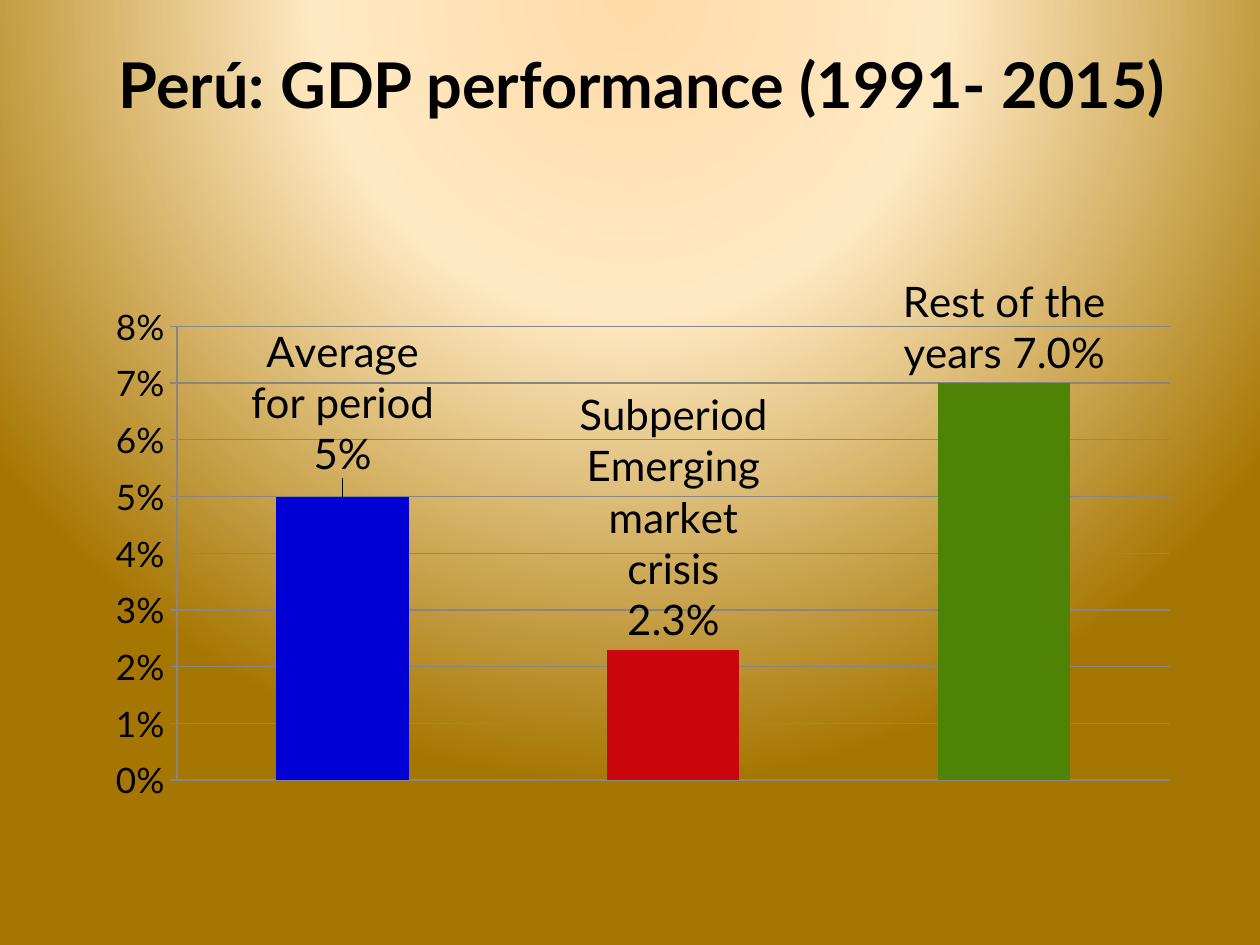
"""Build a slide with a column chart of GDP growth in Peru, 1991 to 2015."""
from dataclasses import dataclass

from lxml import etree
from pptx import Presentation
from pptx import util as u
from pptx.chart.data import CategoryChartData
from pptx.dml.color import RGBColor
from pptx.enum import chart as charts, text
from pptx.oxml import parse_xml
from pptx.oxml.ns import nsdecls, qn


@dataclass(frozen=True)
class Theme:
    font: str = "Lato"
    ink: str = "000000"
    grid: str = "868686"
    backdrop: tuple = ((0, "FFDBA9"), (40, "FFE9C2"), (100, "A67602"))
    title_size: int = 36
    label_size: int = 24
    axis_size: int = 20


theme = Theme()


def style_font(font, size, bold=False):
    font.name = theme.font
    font.size = u.Pt(size)
    font.bold = bold
    font.color.rgb = RGBColor.from_string(theme.ink)


def manual_layout(**values):
    layout = etree.Element(qn("c:layout"))
    manual = etree.SubElement(layout, qn("c:manualLayout"))
    for name, value in values.items():
        etree.SubElement(manual, qn(f"c:{name}")).set("val", str(value))
    return layout


deck = Presentation()
deck.slide_width, deck.slide_height = u.Cm(25.4), u.Cm(19.05)
page = deck.slides.add_slide(deck.slide_layouts[6])

page.background.fill.gradient()
backdrop = page.element.xpath(".//p:bgPr/a:gradFill")[0]
stops = "".join(
    f'<a:gs pos="{place * 1000}"><a:srgbClr val="{color}"/></a:gs>'
    for place, color in theme.backdrop
)
backdrop.getparent().replace(backdrop, parse_xml(
    f'<a:gradFill {nsdecls("a")} rotWithShape="1"><a:gsLst>{stops}</a:gsLst>'
    '<a:path path="circle"><a:fillToRect l="50000" t="-80000" r="50000" b="180000"/>'
    "</a:path></a:gradFill>"
))

box = page.shapes.add_textbox(u.Cm(1.83), u.Cm(-0.89), u.Cm(22.23), u.Cm(3.96))
frame = box.text_frame
frame.word_wrap = True
frame.vertical_anchor = text.MSO_ANCHOR.BOTTOM
frame.margin_bottom = u.Cm(0.63)
para = frame.paragraphs[0]
para.alignment = text.PP_ALIGN.CENTER
span = para.add_run()
span.text = "Perú: GDP performance (1991- 2015)"
style_font(span.font, theme.title_size, bold=True)

bars = (
    (0.05, "0000D5", ("Average for period", "5%")),
    (0.023, "CA060D", ("Subperiod Emerging market crisis", "2.3%")),
    (0.07, "4E8305", ("Rest of the years 7.0%",)),
)
data = CategoryChartData(number_format="0.0%")
data.categories = ["1", "2", "3"]
data.add_series("Series 1", [value for value, color, lines in bars])
chart = page.shapes.add_chart(
    charts.XL_CHART_TYPE.COLUMN_CLUSTERED,
    u.Cm(1.57), u.Cm(4.52), u.Cm(22.23), u.Cm(12.88), data,
).chart
chart.has_legend = False
chart.has_title = False
style_font(chart.font, theme.axis_size)
chart.category_axis.visible = False

axis = chart.value_axis
axis.minimum_scale, axis.maximum_scale, axis.major_unit = 0, 0.08, 0.01
axis.major_tick_mark = charts.XL_TICK_MARK.OUTSIDE
axis.has_major_gridlines = True
axis.tick_labels.number_format = "0%"
axis.tick_labels.number_format_is_linked = False
style_font(axis.tick_labels.font, theme.axis_size)
for line in (axis.format.line, axis.major_gridlines.format.line):
    line.color.rgb = RGBColor.from_string(theme.grid)
    line.width = u.Pt(0.75)

plot = chart.plots[0]
plot.gap_width = 150
plot.vary_by_categories = False
series = plot.series[0]
for index, (value, color, lines) in enumerate(bars):
    point = series.points[index]
    point.format.fill.solid()
    point.format.fill.fore_color.rgb = RGBColor.from_string(color)
    label = point.data_label
    for number, line in enumerate(lines):
        paragraphs = label.text_frame
        para = paragraphs.add_paragraph() if number else paragraphs.paragraphs[0]
        span = para.add_run()
        span.text = line
        style_font(span.font, theme.label_size)
    label.position = charts.XL_LABEL_POSITION.OUTSIDE_END

area = chart.element.xpath(".//c:plotArea")[0]
for layout in area.findall(qn("c:layout")):
    area.remove(layout)
area.insert(0, manual_layout(
    layoutTarget="inner", xMode="edge", yMode="edge", x=0.09, y=0.16, w=0.9, h=0.71,
))
average_label = chart.element.xpath(".//c:dLbl")[0]
average_label.insert(1, manual_layout(x=0, y=-0.02))

deck.save("out.pptx")
